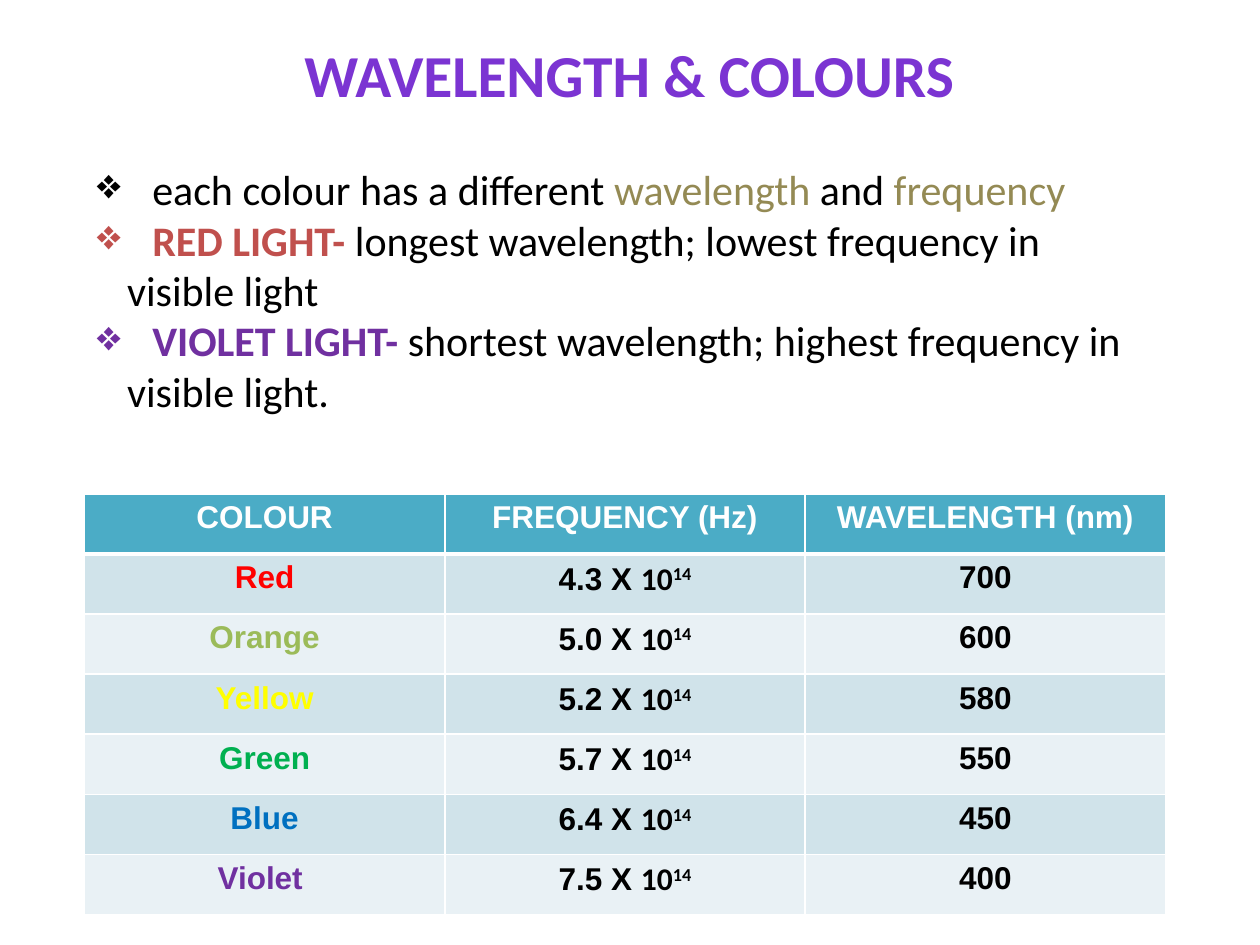
from lxml.etree import SubElement
from pptx import Presentation
from pptx.dml.color import RGBColor
from pptx.enum.text import MSO_ANCHOR, PP_ALIGN
from pptx.oxml import parse_xml
from pptx.oxml.ns import nsdecls, qn
from pptx.util import Inches, Pt


def color(font, value):
    font.color.rgb = RGBColor.from_string(value)


def add_run(p, text, value, bold=False, name=None):
    r = p.add_run()
    r.text = text
    r.font.bold = bold
    color(r.font, value)
    if name:
        r.font.name = name
    return r


BLACK, WHITE, TAN, VIOLET = "000000", "FFFFFF", "948A54", "7030A0"

prs = Presentation()
prs.slide_width, prs.slide_height = Inches(10), Inches(7.5)
s = prs.slides.add_slide(prs.slide_layouts[5])
left, width = Inches(0.67), Inches(8.58)

# Title
title = s.shapes.title
title.left, title.top = Inches(0.24), Inches(0.25)
title.width, title.height = Inches(9.51), Inches(0.67)
title.text_frame.text = "WAVELENGTH & COLOURS"
p = title.text_frame.paragraphs[0]
p.alignment = PP_ALIGN.CENTER
p.font.size, p.font.bold, p.font.name = Pt(34), True, "Calibri"
color(p.font, "7B34D2")

# Bulleted statements: the first line starts at a tab stop past the bullet
statements = [
    [("\teach colour has a different ", BLACK, False), ("wavelength", TAN, False),
     (" and ", BLACK, False), ("frequency", TAN, False)],
    [("\tRED LIGHT- ", "C0504D", True),
     ("longest wavelength; lowest frequency in visible light", BLACK, False)],
    [("\tVIOLET LIGHT- ", VIOLET, True),
     ("shortest wavelength; highest frequency in visible light.", BLACK, False)],
]
tf = s.shapes.add_textbox(left, Inches(1.25), width, Inches(2.52)).text_frame
tf.word_wrap = True
for i, statement in enumerate(statements):
    p = tf.add_paragraph() if i else tf.paragraphs[0]
    p.font.size, p.font.name = Pt(24), "Calibri"
    for text, value, bold in statement:
        add_run(p, text, value, bold)
    pPr = p._p.get_or_add_pPr()
    pPr.set("marL", str(Inches(0.24)))
    pPr.set("indent", str(-Inches(0.24)))
    pPr.insert(0, parse_xml(f'<a:buChar {nsdecls("a")} char="❖"/>'))
    pPr.insert(1, parse_xml(f'<a:tabLst {nsdecls("a")}>'
                            f'<a:tab pos="{Inches(0.44)}" algn="l"/></a:tabLst>'))

# Table of colours
header = ["COLOUR", "FREQUENCY (Hz)", "WAVELENGTH (nm)"]
colours = [
    ("Red", "FF0000", "4.3", "700"),
    ("Orange", "9BBB59", "5.0", "600"),
    ("Yellow", "FFFF00", "5.2", "580"),
    ("Green", "00B050", "5.7", "550"),
    ("Blue", "0070C0", "6.4", "450"),
    ("Violet ", VIOLET, "7.5", "400"),
]
rows = len(colours) + 1
table = s.shapes.add_table(rows, 3, left, Inches(3.92), width, Inches(3.34)).table

for cell, text in zip(table.rows[0].cells, header):
    add_run(cell.text_frame.paragraphs[0], text, WHITE, True)
for i, (name, value, frequency, wavelength) in enumerate(colours, 1):
    first, second, third = [c.text_frame.paragraphs[0] for c in table.rows[i].cells]
    add_run(first, name, value, True)
    add_run(second, f"{frequency} X ", BLACK, True)
    add_run(second, "10", BLACK, True, "Calibri")
    power = add_run(second, "14", BLACK, True, "Calibri")
    power.font._element.set("baseline", "30000")
    add_run(third, wavelength, BLACK, True)

# Cell fills, fonts and white borders
for i in range(rows):
    for cell in table.rows[i].cells:
        p = cell.text_frame.paragraphs[0]
        p.alignment = PP_ALIGN.CENTER
        for r in p.runs:
            r.font.size = Pt(18)
            r.font.name = r.font.name or "Arial"
        cell.vertical_anchor = MSO_ANCHOR.TOP
        tcPr = cell._tc.get_or_add_tcPr()
        for side in ("lnL", "lnR", "lnT", "lnB"):
            points = 3 if i == 0 and side == "lnB" else 1
            ln = SubElement(tcPr, qn(f"a:{side}"), w=str(Pt(points)))
            SubElement(SubElement(ln, qn("a:solidFill")), qn("a:srgbClr"), val=WHITE)
        cell.fill.solid()
        fill = "4BACC6" if i == 0 else "D0E3EA" if i % 2 else "E9F1F5"
        cell.fill.fore_color.rgb = RGBColor.from_string(fill)
        tcPr.append(tcPr.find(qn("a:solidFill")))

prs.save("out.pptx")
